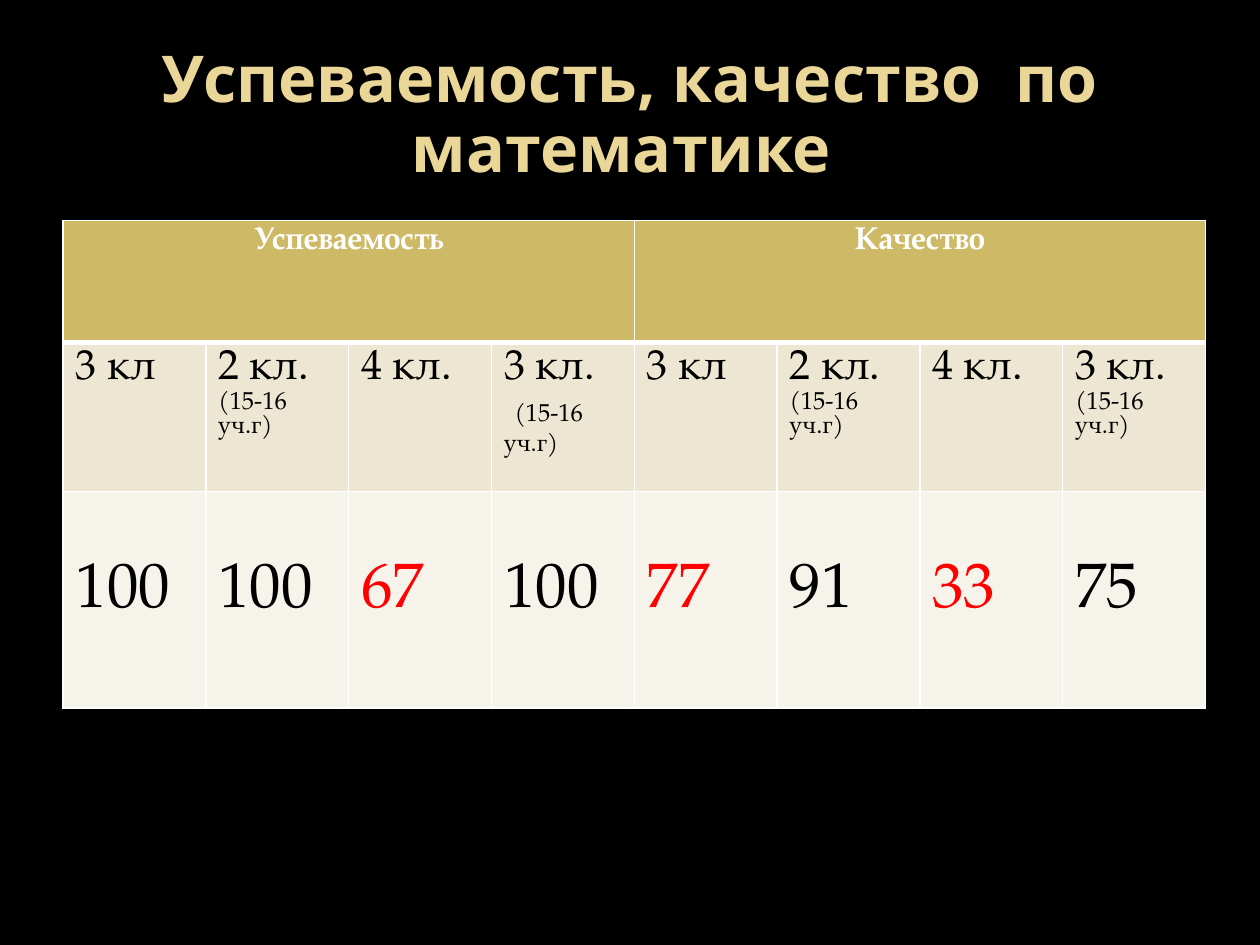
from lxml import etree
from pptx import Presentation
from pptx.dml.color import RGBColor
from pptx.enum.text import MSO_ANCHOR, PP_ALIGN
from pptx.oxml.ns import qn
from pptx.util import Inches, Pt

CENTER, LEFT = PP_ALIGN.CENTER, PP_ALIGN.LEFT
MIDDLE = MSO_ANCHOR.MIDDLE
BLACK = RGBColor(0x00, 0x00, 0x00)
WHITE = RGBColor(0xFF, 0xFF, 0xFF)
RED = RGBColor(0xFF, 0x00, 0x00)
CREAM = RGBColor(0xEA, 0xD6, 0x96)
GOLD = RGBColor(0xCE, 0xB9, 0x66)
SAND = RGBColor(0xED, 0xE6, 0xD3)
PALE = RGBColor(0xF6, 0xF3, 0xEA)

SERIF = "TeX Gyre Pagella"
HEAD = {"name": SERIF, "size": Pt(18), "bold": True}
GRADE = {"name": SERIF, "size": Pt(24), "bold": False}
YEAR = {"name": SERIF, "size": Pt(14), "bold": False}
SCORE = {"name": SERIF, "size": Pt(36), "bold": False}
TITLE = {"name": "Noto Sans", "size": Pt(36.9), "bold": True}

TERM = ("(15-16 уч.г)", YEAR)
THIRD = [("3 кл", GRADE)]
SECOND = [("2 кл. ", GRADE), TERM]
FOURTH = [("4 кл.", GRADE)]
SHORT = [("3 кл.", GRADE)]
GROUPS = ["Успеваемость", "Качество"]
GRADES = [
    [THIRD], [SECOND], [FOURTH], [SHORT, [(" ", GRADE), TERM]],
    [THIRD], [SECOND], [FOURTH], [SHORT, [TERM]],
]
SCORES = [100, 100, 67, 100, 77, 91, 33, 75]
LOW = {67, 77, 33}


def add_run(para, text, form, color):
    run = para.add_run()
    run.text = text
    for key, value in form.items():
        setattr(run.font, key, value)
    run.font.color.rgb = color


def add_edges(cell, base):
    props = cell._tc.get_or_add_tcPr()
    widths = {"a:lnL": 1, "a:lnR": 1, "a:lnT": 1, "a:lnB": base}
    for spot, (tag, width) in enumerate(widths.items()):
        line = etree.Element(qn(tag), w=str(Pt(width)))
        fill = etree.SubElement(line, qn("a:solidFill"))
        etree.SubElement(fill, qn("a:srgbClr"), val=str(WHITE))
        props.insert(spot, line)


def fill_cell(cell, paras, fill, color, align=LEFT):
    cell.fill.solid()
    cell.fill.fore_color.rgb = fill
    frame = cell.text_frame
    for spot, runs in enumerate(paras):
        para = frame.add_paragraph() if spot else frame.paragraphs[0]
        para.alignment = align
        for text, form in runs:
            add_run(para, text, form, color)


def add_title(slide, left, top, width, height):
    frame = slide.shapes.add_textbox(left, top, width, height).text_frame
    frame.word_wrap = True
    frame.vertical_anchor = MIDDLE
    para = frame.paragraphs[0]
    para.alignment = CENTER
    para.line_spacing = 0.9
    add_run(para, "Успеваемость, качество  по математике ", TITLE, CREAM)


def add_marks(slide, left, top, width, height):
    count = len(SCORES)
    table = slide.shapes.add_table(3, count, left, top, width, height).table
    for col in table.columns:
        col.width = width // count
    for row, tall in zip(table.rows, (0.97, 1.18, 1.72)):
        row.height = Inches(tall)
    span = count // len(GROUPS)
    for spot, name in enumerate(GROUPS):
        first = spot * span
        cell = table.cell(0, first)
        cell.merge(table.cell(0, first + span - 1))
        fill_cell(cell, [[(name, HEAD)]], GOLD, WHITE, CENTER)
    for col, (grade, score) in enumerate(zip(GRADES, SCORES)):
        fill_cell(table.cell(1, col), grade, SAND, BLACK)
        cell = table.cell(2, col)
        cell.margin_top = Inches(0.56)
        color = RED if score in LOW else BLACK
        fill_cell(cell, [[(str(score), SCORE)]], PALE, color)
        for row, base in enumerate((3, 1, 1)):
            add_edges(table.cell(row, col), base)


def main():
    deck = Presentation()
    deck.slide_width, deck.slide_height = Inches(10), Inches(7.5)
    slide = deck.slides.add_slide(deck.slide_layouts[6])
    slide.background.fill.solid()
    slide.background.fill.fore_color.rgb = BLACK
    add_title(slide, Inches(0.5), Inches(0.3), Inches(9), Inches(1.25))
    add_marks(slide, Inches(0.5), Inches(1.75), Inches(9.07), Inches(3.87))
    deck.save("out.pptx")


if __name__ == "__main__":
    main()
